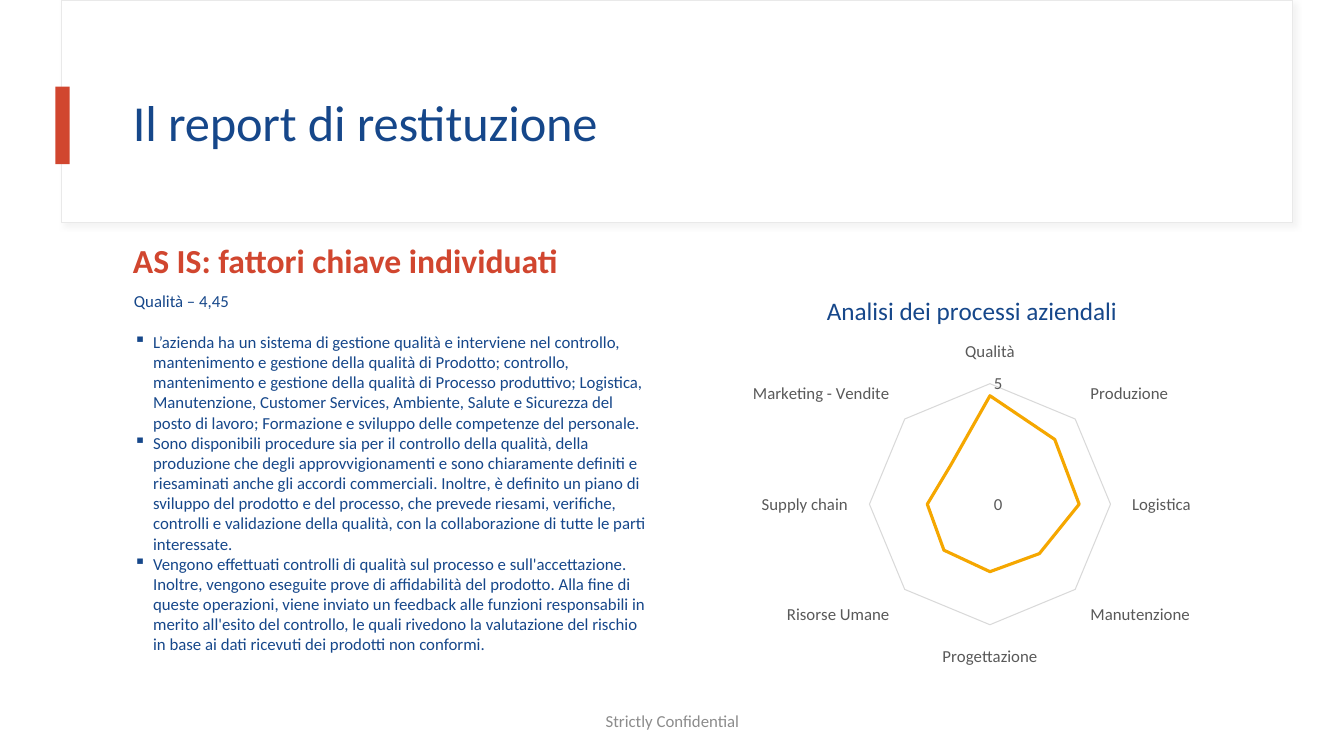
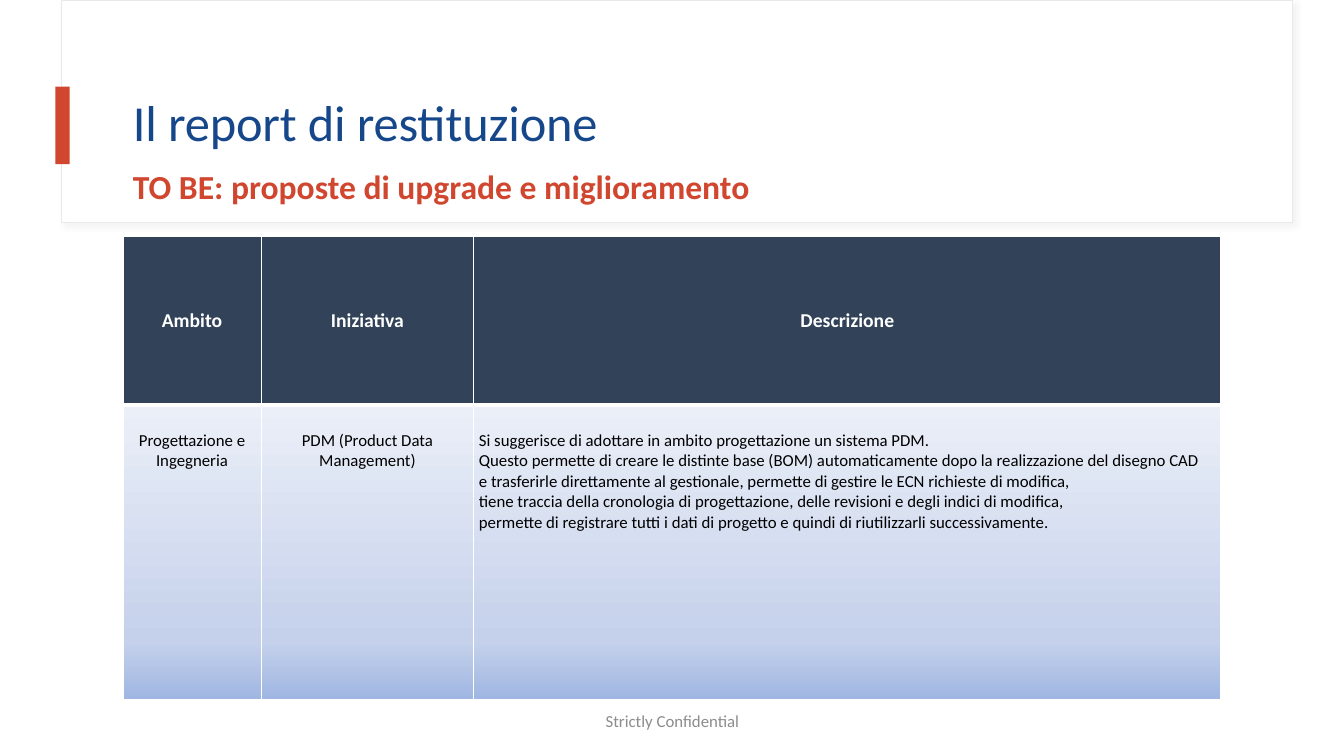
import dataclasses
import typing

import lxml.etree
import pptx
import pptx.chart.data
import pptx.dml.color
import pptx.enum.chart
import pptx.enum.shapes
import pptx.enum.text
import pptx.oxml
import pptx.oxml.ns
import pptx.util

Inches = pptx.util.Inches
Pt = pptx.util.Pt
Align = pptx.enum.text.PP_ALIGN
Anchor = pptx.enum.text.MSO_ANCHOR

FONT = "Calibri"
BLUE = "16478A"
RED = "D1462F"
WHITE = "FFFFFF"
BLACK = "000000"
HEADER_FILL = "314259"
FRAME_LINE = "E9E9E9"
FOOTER_GREY = "8C8C8C"
GRID_GREY = "D9D9D9"
LABEL_GREY = "595959"
AMBER = "F5A700"
GRADIENT = ((0, "9FB6E2"), (20, "C5D1EB"), (100, "EBEFF8"))
LEFT = 1.22
NAMESPACE = pptx.oxml.ns.nsdecls("a")


class Area(typing.NamedTuple):
    left: float
    top: float
    width: float
    height: float

    def lengths(self) -> list:
        return [Inches(value) for value in self]


@dataclasses.dataclass(frozen=True)
class Style:
    size: float
    color: str
    bold: bool = False
    align: typing.Any = Align.LEFT
    anchor: typing.Any = Anchor.TOP
    line_spacing: typing.Optional[float] = None
    tracking: typing.Optional[int] = None


@dataclasses.dataclass(frozen=True)
class Cell:
    lines: tuple
    align: typing.Any = Align.CENTER


TITLE = Style(36, BLUE, anchor=Anchor.MIDDLE, line_spacing=0.9, tracking=-10)
SUBTITLE = Style(24, RED, bold=True, anchor=Anchor.BOTTOM, line_spacing=1.1)
FOOTER = Style(12, FOOTER_GREY, align=Align.CENTER, anchor=Anchor.MIDDLE)
BODY = Style(12, BLUE)
HEADER_CELL = Style(14, WHITE, bold=True, anchor=Anchor.MIDDLE)
BODY_CELL = Style(12, BLACK)

FINDINGS = (
    "L’azienda ha un sistema di gestione qualità e interviene nel controllo, mantenimento e "
    "gestione della qualità di Prodotto; controllo, mantenimento e gestione della qualità di "
    "Processo produttivo; Logistica, Manutenzione, Customer Services, Ambiente, Salute e "
    "Sicurezza del posto di lavoro; Formazione e sviluppo delle competenze del personale.",
    "Sono disponibili procedure sia per il controllo della qualità, della produzione che degli "
    "approvvigionamenti e sono chiaramente definiti e riesaminati anche gli accordi commerciali. "
    "Inoltre, è definito un piano di sviluppo del prodotto e del processo, che prevede riesami, "
    "verifiche, controlli e validazione della qualità, con la collaborazione di tutte le parti "
    "interessate.",
    "Vengono effettuati controlli di qualità sul processo e sull'accettazione. Inoltre, vengono "
    "eseguite prove di affidabilità del prodotto. Alla fine di queste operazioni, viene inviato "
    "un feedback alle funzioni responsabili in merito all'esito del controllo, le quali rivedono "
    "la valutazione del rischio in base ai dati ricevuti dei prodotti non conformi.",
)

SCORES = {
    "Qualità": 4.5,
    "Produzione": 3.8,
    "Logistica": 3.7,
    "Manutenzione": 2.9,
    "Progettazione": 2.8,
    "Risorse Umane": 2.7,
    "Supply chain": 2.6,
    "Marketing - Vendite": 2.3,
}

COLUMN_WIDTHS = (1.37, 2.11, 7.41)
ROW_HEIGHTS = (1.67, 2.92)
PROPOSALS = (
    (Cell(("Ambito",)), Cell(("Iniziativa",)), Cell(("Descrizione",))),
    (
        Cell(("Progettazione e Ingegneria",)),
        Cell(("PDM (Product Data Management)",)),
        Cell(
            (
                "Si suggerisce di adottare in ambito progettazione un sistema PDM.",
                "Questo permette di creare le distinte base (BOM) automaticamente dopo la "
                "realizzazione del disegno CAD",
                "e trasferirle direttamente al gestionale, permette di gestire le ECN richieste "
                "di modifica,",
                "tiene traccia della cronologia di progettazione, delle revisioni e degli indici "
                "di modifica,",
                "permette di registrare tutti i dati di progetto e quindi di riutilizzarli "
                "successivamente.",
            ),
            Align.JUSTIFY,
        ),
    ),
)


def rgb(color: str) -> pptx.dml.color.RGBColor:
    return pptx.dml.color.RGBColor.from_string(color)


def set_font(font, size: float, color: str, bold: bool = False) -> None:
    font.name = FONT
    font.size = Pt(size)
    font.bold = bold
    font.color.rgb = rgb(color)


def add_span(para, text: str, style: Style) -> None:
    span = para.add_run()
    span.text = text
    set_font(span.font, style.size, style.color, style.bold)
    if style.tracking is not None:
        span.font._element.set("spc", str(style.tracking))


def add_paragraphs(frame, lines: typing.Iterable[str], style: Style, align) -> list:
    for index, line in enumerate(lines):
        para = frame.add_paragraph() if index else frame.paragraphs[0]
        para.alignment = align
        if style.line_spacing:
            para.line_spacing = style.line_spacing
        add_span(para, line, style)
    return list(frame.paragraphs)


def add_text(page, area: Area, lines: typing.Iterable[str], style: Style) -> list:
    frame = page.shapes.add_textbox(*area.lengths()).text_frame
    frame.word_wrap = True
    frame.vertical_anchor = style.anchor
    return add_paragraphs(frame, lines, style, style.align)


def add_panel(page, area: Area, fill: str, line: typing.Optional[str] = None):
    panel = page.shapes.add_shape(pptx.enum.shapes.MSO_SHAPE.RECTANGLE, *area.lengths())
    panel.shadow.inherit = False
    panel.fill.solid()
    panel.fill.fore_color.rgb = rgb(fill)
    if line:
        panel.line.color.rgb = rgb(line)
        panel.line.width = Pt(0.75)
    else:
        panel.line.fill.background()
    return panel


def add_soft_shadow(panel) -> None:
    effects = panel._element.spPr.find(pptx.oxml.ns.qn("a:effectLst"))
    effects.append(pptx.oxml.parse_xml(
        f'<a:outerShdw {NAMESPACE} blurRad="{Pt(4)}" dist="{Pt(3)}" dir="2700000">'
        f'<a:srgbClr val="{GRID_GREY}"><a:alpha val="30000"/></a:srgbClr></a:outerShdw>'
    ))


def add_page(deck, subtitle: str, subtitle_area: Area):
    page = deck.slides.add_slide(deck.slide_layouts[6])
    add_soft_shadow(add_panel(page, Area(0.61, 0, 12.21, 2.21), WHITE, FRAME_LINE))
    add_panel(page, Area(0.55, 0.86, 0.14, 0.77), RED)
    add_text(page, Area(LEFT, 0.6, 11.12, 1.29), ["Il report di restituzione"], TITLE)
    add_text(page, subtitle_area, [subtitle], SUBTITLE)
    add_text(page, Area(4.42, 6.95, 4.5, 0.4), ["Strictly Confidential"], FOOTER)
    return page


def set_indent(para, left: float, first: float) -> None:
    properties = para._p.get_or_add_pPr()
    properties.set("marL", str(Inches(left)))
    properties.set("indent", str(Inches(first)))


def add_findings(page) -> None:
    area = Area(LEFT, 2.84, 5.31, 3.86)
    heading, *bullets = add_text(page, area, ("Qualità – 4,45", *FINDINGS), BODY)
    set_indent(heading, 0.01, 0)
    heading.space_after = Pt(14.5)
    for para in bullets:
        set_indent(para, 0.2, -0.19)
        bullet = lxml.etree.SubElement(para._p.get_or_add_pPr(), pptx.oxml.ns.qn("a:buChar"))
        bullet.set("char", "▪")


def add_radar(page) -> None:
    data = pptx.chart.data.CategoryChartData()
    data.categories = list(SCORES)
    data.add_series("Series 1", list(SCORES.values()))
    chart = page.shapes.add_chart(
        pptx.enum.chart.XL_CHART_TYPE.RADAR, *Area(6.67, 2.73, 5.94, 3.96).lengths(), data
    ).chart
    set_font(chart.font, 12, LABEL_GREY)
    chart.has_legend = False
    chart.has_title = True
    add_span(
        chart.chart_title.text_frame.paragraphs[0], "Analisi dei processi aziendali", Style(18, BLUE)
    )
    chart.chart_title.include_in_layout = False

    for axis in (chart.category_axis, chart.value_axis):
        axis.major_tick_mark = pptx.enum.chart.XL_TICK_MARK.NONE
        axis.minor_tick_mark = pptx.enum.chart.XL_TICK_MARK.NONE
        set_font(axis.tick_labels.font, 12, LABEL_GREY)
    chart.category_axis.has_major_gridlines = False
    scores = chart.value_axis
    scores.minimum_scale = 0
    scores.maximum_scale = 5
    scores.major_unit = 5
    scores.has_major_gridlines = True
    scores.format.line.fill.background()
    for line in (chart.category_axis.format.line, scores.major_gridlines.format.line):
        line.color.rgb = rgb(GRID_GREY)
        line.width = Pt(0.75)

    plot = chart.plots[0]
    plot.vary_by_categories = False
    series = plot.series[0]
    series.smooth = False
    series.marker.style = pptx.enum.chart.XL_MARKER_STYLE.NONE
    series.format.line.color.rgb = rgb(AMBER)
    series.format.line.width = Pt(2.25)


def add_borders(cell, thick_side: str) -> None:
    properties = cell._tc.get_or_add_tcPr()
    for side in ("lnL", "lnR", "lnT", "lnB"):
        width = Pt(3 if side == thick_side else 1)
        properties.append(pptx.oxml.parse_xml(
            f'<a:{side} {NAMESPACE} w="{width}"><a:solidFill>'
            f'<a:srgbClr val="{WHITE}"/></a:solidFill></a:{side}>'
        ))


def fill_gradient(cell) -> None:
    stops = "".join(
        f'<a:gs pos="{position * 1000}"><a:srgbClr val="{color}"/></a:gs>'
        for position, color in GRADIENT
    )
    cell._tc.get_or_add_tcPr().append(pptx.oxml.parse_xml(
        f'<a:gradFill {NAMESPACE} rotWithShape="1"><a:gsLst>{stops}</a:gsLst>'
        f'<a:lin ang="16200000" scaled="0"/></a:gradFill>'
    ))


def add_proposals(page) -> None:
    area = Area(LEFT, 2.35, sum(COLUMN_WIDTHS), sum(ROW_HEIGHTS))
    table = page.shapes.add_table(len(ROW_HEIGHTS), len(COLUMN_WIDTHS), *area.lengths()).table
    table.horz_banding = False
    for column, width in zip(table.columns, COLUMN_WIDTHS):
        column.width = Inches(width)
    for row, height, contents in zip(table.rows, ROW_HEIGHTS, PROPOSALS):
        row.height = Inches(height)
        is_header = contents is PROPOSALS[0]
        style = HEADER_CELL if is_header else BODY_CELL
        for cell, content in zip(row.cells, contents):
            cell.margin_left = cell.margin_right = cell.margin_bottom = Inches(0.05)
            cell.margin_top = Inches(0.05 if is_header else 0.25)
            cell.vertical_anchor = style.anchor
            add_borders(cell, "lnB" if is_header else "lnT")
            if is_header:
                cell.fill.solid()
                cell.fill.fore_color.rgb = rgb(HEADER_FILL)
            else:
                fill_gradient(cell)
            add_paragraphs(cell.text_frame, content.lines, style, content.align)


def main() -> None:
    deck = pptx.Presentation()
    deck.slide_width = Inches(13.33)
    deck.slide_height = Inches(7.5)
    as_is = add_page(deck, "AS IS: fattori chiave individuati", Area(LEFT, 2.29, 5.31, 0.54))
    add_findings(as_is)
    add_radar(as_is)
    to_be = add_page(
        deck, "TO BE: proposte di upgrade e miglioramento", Area(LEFT, 1.6, 11.12, 0.49)
    )
    add_proposals(to_be)
    deck.save("out.pptx")


if __name__ == "__main__":
    main()
